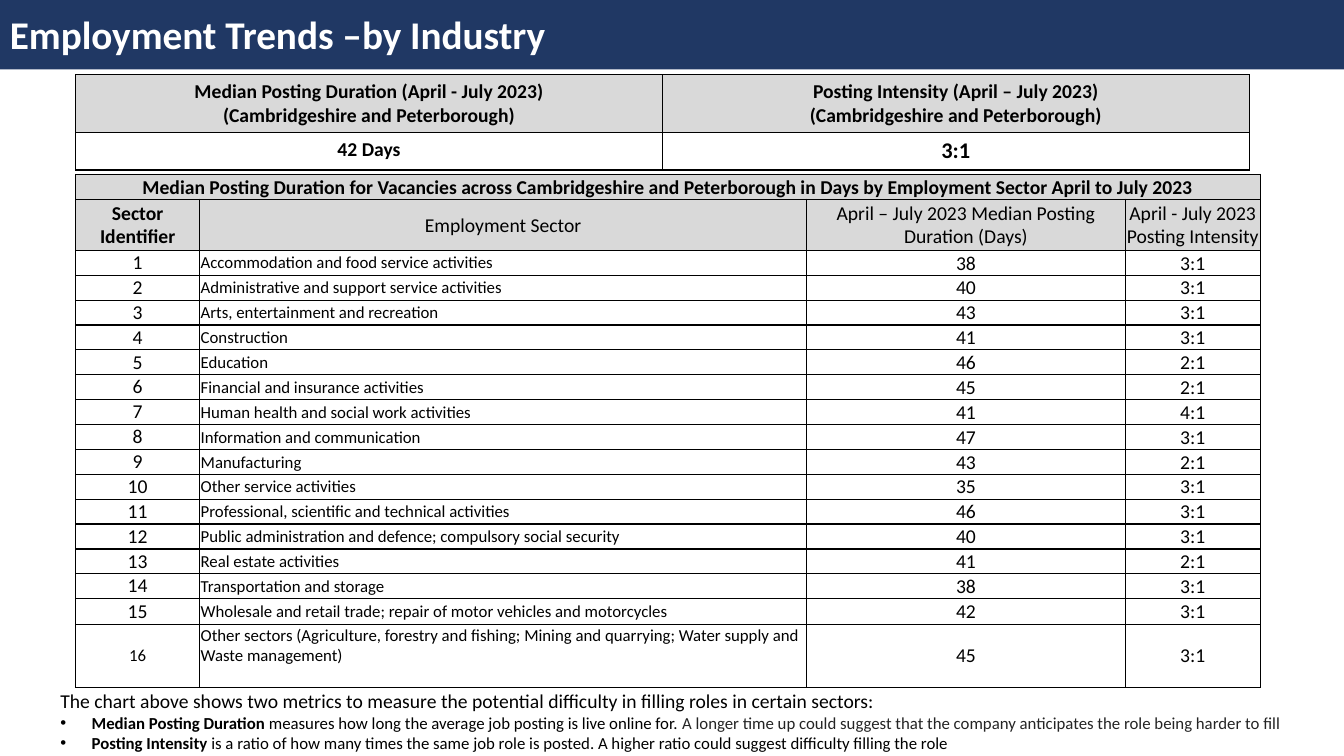
from dataclasses import dataclass

from lxml.etree import SubElement
from pptx import Presentation
from pptx.dml.color import RGBColor
from pptx.enum.shapes import MSO_SHAPE
from pptx.enum.text import MSO_ANCHOR, PP_ALIGN
from pptx.oxml.ns import qn
from pptx.slide import Slide
from pptx.table import Table, _Cell
from pptx.text.text import Font
from pptx.util import Inches, Length, Pt

SLIDE_WIDTH, SLIDE_HEIGHT = Inches(13.33), Inches(7.5)
FONT_NAME = "Calibri"
COLOURS = {
    "banner": "203864",
    "header": "D9D9D9",
    "white": "FFFFFF",
    "black": "000000",
    "soft": "242424",
}


@dataclass(frozen=True)
class CellStyle:
    size: float = 14
    bold: bool = False
    align: PP_ALIGN = PP_ALIGN.CENTER
    anchor: MSO_ANCHOR = MSO_ANCHOR.MIDDLE
    fill: str = ""
    insets: tuple[float, float, float, float] = (0.01, 0.01, 0.01, 0)


@dataclass(frozen=True)
class Sector:
    name: str
    days: int
    intensity: str


@dataclass(frozen=True)
class NoteRun:
    text: str
    bold: bool = False
    colour: str = "black"


# Table contents
SECTORS = [
    Sector("Accommodation and food service activities", 38, "3:1"),
    Sector("Administrative and support service activities", 40, "3:1"),
    Sector("Arts, entertainment and recreation", 43, "3:1"),
    Sector("Construction", 41, "3:1"),
    Sector("Education", 46, "2:1"),
    Sector("Financial and insurance activities", 45, "2:1"),
    Sector("Human health and social work activities", 41, "4:1"),
    Sector("Information and communication", 47, "3:1"),
    Sector("Manufacturing", 43, "2:1"),
    Sector("Other service activities", 35, "3:1"),
    Sector("Professional, scientific and technical activities", 46, "3:1"),
    Sector("Public administration and defence; compulsory social security", 40, "3:1"),
    Sector("Real estate activities", 41, "2:1"),
    Sector("Transportation and storage", 38, "3:1"),
    Sector("Wholesale and retail trade; repair of motor vehicles and motorcycles", 42, "3:1"),
    Sector(
        "Other sectors (Agriculture, forestry and fishing; Mining and quarrying; "
        "Water supply and Waste management)", 45, "3:1"),
]
SECTOR_HEADINGS = [
    "Sector Identifier",
    "Employment Sector",
    "April – July 2023 Median Posting Duration (Days)",
    "April - July 2023 Posting Intensity",
]
NOTES = [
    [
        NoteRun("Median Posting Duration ", bold=True),
        NoteRun("measures how long the average job posting is live online for."),
        NoteRun(" A longer time up could suggest that the company anticipates "
                "the role being harder to fill", colour="soft"),
    ],
    [
        NoteRun("Posting Intensity ", bold=True),
        NoteRun("is a ratio of how many times the same job role is posted. "
                "A higher ratio could suggest difficulty filling the role"),
    ],
]


def across(percent: float) -> Length:
    return Length(round(SLIDE_WIDTH * percent / 100))


def down(percent: float) -> Length:
    return Length(round(SLIDE_HEIGHT * percent / 100))


def set_font(font: Font, size: float, bold: bool = False, colour: str = "black") -> None:
    font.name = FONT_NAME
    font.size = Pt(size)
    font.bold = bold
    font.color.rgb = RGBColor.from_string(COLOURS[colour])


def draw_borders(cell: _Cell) -> None:
    properties = cell._tc.get_or_add_tcPr()
    for side in ("a:lnL", "a:lnR", "a:lnT", "a:lnB"):
        line = SubElement(properties, qn(side), w=str(Pt(1)))
        fill = SubElement(line, qn("a:solidFill"))
        SubElement(fill, qn("a:srgbClr"), val=COLOURS["black"])


def fill_cell(cell: _Cell, text: str, style: CellStyle) -> None:
    left, top, right, bottom = style.insets
    cell.margin_left, cell.margin_top = Inches(left), Inches(top)
    cell.margin_right, cell.margin_bottom = Inches(right), Inches(bottom)
    cell.vertical_anchor = style.anchor
    if style.fill:
        cell.fill.solid()
        cell.fill.fore_color.rgb = RGBColor.from_string(COLOURS[style.fill])
    paragraph = cell.text_frame.paragraphs[0]
    paragraph.text = text
    paragraph.alignment = style.align
    set_font(paragraph.font, style.size, style.bold)


def add_grid(slide: Slide, top: float, columns: list[float], rows: list[float]) -> Table:
    table = slide.shapes.add_table(
        len(rows), len(columns), across(5.63), down(top),
        across(sum(columns)), down(sum(rows))).table
    table.first_row = table.horz_banding = False
    for column, width in zip(table.columns, columns):
        column.width = across(width)
    for row, height in zip(table.rows, rows):
        row.height = down(height)
    for cell in table.iter_cells():
        draw_borders(cell)
        cell.fill.background()
    return table


def add_banner(slide: Slide) -> None:
    banner = slide.shapes.add_shape(
        MSO_SHAPE.RECTANGLE, 0, down(-0.27), SLIDE_WIDTH, down(9.47))
    banner.shadow.inherit = False
    banner.fill.solid()
    banner.fill.fore_color.rgb = RGBColor.from_string(COLOURS["banner"])
    banner.line.fill.background()
    banner.text_frame.vertical_anchor = MSO_ANCHOR.MIDDLE
    paragraph = banner.text_frame.paragraphs[0]
    paragraph.text = "Employment Trends –by Industry"
    paragraph.alignment = PP_ALIGN.LEFT
    set_font(paragraph.font, 28, True, "white")


def add_summary_table(slide: Slide) -> None:
    table = add_grid(slide, 9.87, [43.66] * 2, [7.67, 4.93])
    insets = (0.1, 0.05, 0.1, 0.05)
    heading = CellStyle(bold=True, fill="header", insets=insets)
    summaries = [("Median Posting Duration (April - July 2023)", "42 Days", 14),
                 ("Posting Intensity (April – July 2023)", "3:1", 16)]
    for index, (title, value, size) in enumerate(summaries):
        fill_cell(table.cell(0, index), f"{title}\n(Cambridgeshire and Peterborough)", heading)
        fill_cell(table.cell(1, index), value,
                  CellStyle(size, True, anchor=MSO_ANCHOR.TOP, insets=insets))


def add_sector_table(slide: Slide) -> None:
    row_heights = [3.3, 6.75] + [3.27] * (len(SECTORS) - 2) + [3.4, 8.3]
    table = add_grid(slide, 23.07, [9.23, 45.16, 23.71, 10.05], row_heights)
    table.cell(0, 0).merge(table.cell(0, 3))
    fill_cell(table.cell(0, 0),
              "Median Posting Duration for Vacancies across Cambridgeshire and Peterborough "
              "in Days by Employment Sector April to July 2023",
              CellStyle(bold=True, fill="header"))
    for index, heading in enumerate(SECTOR_HEADINGS):
        fill_cell(table.cell(1, index), heading, CellStyle(bold=index == 0, fill="header"))
    for number, sector in enumerate(SECTORS, start=1):
        is_last = number == len(SECTORS)
        name_anchor = MSO_ANCHOR.TOP if is_last else MSO_ANCHOR.MIDDLE
        entries = [
            (str(number), CellStyle(12 if is_last else 14, insets=(0, 0, 0, 0))),
            (sector.name, CellStyle(12, align=PP_ALIGN.LEFT, anchor=name_anchor)),
            (str(sector.days), CellStyle()),
            (sector.intensity, CellStyle()),
        ]
        for index, (text, style) in enumerate(entries):
            fill_cell(table.cell(number + 1, index), text, style)


def add_notes(slide: Slide) -> None:
    text_frame = slide.shapes.add_textbox(
        across(3.75), down(90.53), SLIDE_WIDTH, down(9.87)).text_frame
    text_frame.word_wrap = True
    introduction = text_frame.paragraphs[0]
    introduction.text = ("The chart above shows two metrics to measure the potential "
                         "difficulty in filling roles in certain sectors:")
    set_font(introduction.font, 14)
    for note in NOTES:
        paragraph = text_frame.add_paragraph()
        properties = paragraph._p.get_or_add_pPr()
        properties.set("marL", str(across(2.33)))
        properties.set("indent", str(-across(2.33)))
        SubElement(properties, qn("a:buFont"), typeface="Arial")
        SubElement(properties, qn("a:buChar"), char="•")
        for part in note:
            run = paragraph.add_run()
            run.text = part.text
            set_font(run.font, 12, part.bold, part.colour)


def main() -> None:
    presentation = Presentation()
    presentation.slide_width, presentation.slide_height = SLIDE_WIDTH, SLIDE_HEIGHT
    slide = presentation.slides.add_slide(presentation.slide_layouts[6])
    add_banner(slide)
    add_summary_table(slide)
    add_sector_table(slide)
    add_notes(slide)
    presentation.save("out.pptx")


if __name__ == "__main__":
    main()
